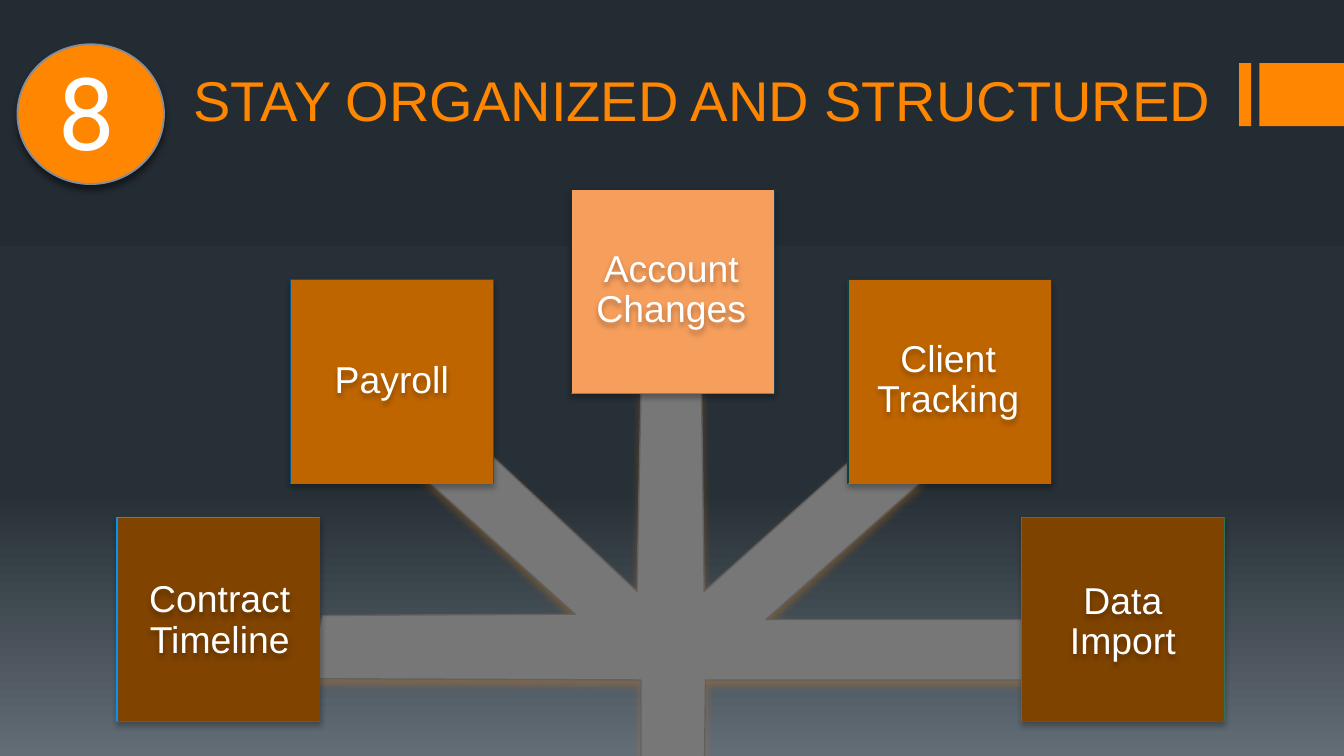
from dataclasses import dataclass

from pptx import Presentation
from pptx.dml.color import RGBColor
from pptx.enum.shapes import MSO_SHAPE
from pptx.enum.text import MSO_ANCHOR, MSO_AUTO_SIZE, PP_ALIGN
from pptx.oxml import parse_xml
from pptx.oxml.ns import nsdecls, qn
from pptx.util import Inches, Pt

RECT, OVAL = MSO_SHAPE.RECTANGLE, MSO_SHAPE.OVAL
TOP, MIDDLE = MSO_ANCHOR.TOP, MSO_ANCHOR.MIDDLE
LEFT, CENTER = PP_ALIGN.LEFT, PP_ALIGN.CENTER
FIT, FIXED = MSO_AUTO_SIZE.SHAPE_TO_FIT_TEXT, MSO_AUTO_SIZE.NONE


@dataclass(frozen=True)
class Theme:
    font: str = "Arial"
    digit_font: str = "Roboto"
    accent: str = "FF8600"
    white: str = "FFFFFF"
    hub: str = "777777"
    hub_edge: str = "606060"
    ring: str = "838D9B"
    title_size: int = 30
    label_size: int = 20
    digit_size: int = 54
    # position in percent, colour
    back: tuple = ((0, "242C33"), (65, "273037"), (100, "636D76"))
    # colour, opacity in percent, blur and distance in points
    tile_shade: tuple = ("000000", 27, 3, 2.1)
    hub_shade: tuple = ("FF8600", 27, 4, 2)
    ring_shade: tuple = ("000000", 48, 3.8, 3)


THEME = Theme()
SLIDE_W = 10
SLIDE_H = SLIDE_W * 9 / 16
TILE_W, TILE_H = 1.51, 1.52
LABEL_W = 1.49

# left, top, fill, edge
TILES = [
    (4.25, 1.41, "F69E5C", "013253"),
    (6.31, 2.08, "BF6500", "034543"),
    (7.6, 3.85, "7F4300", "048C89"),
    (0.87, 3.85, "804300", "0195F9"),
    (2.16, 2.08, "BF6500", "01568F"),
]

# text, left, top, height
LABELS = [
    ("Contract Timeline", 0.89, 4.27, 0.7),
    ("Payroll", 2.17, 2.64, 0.39),
    ("Client Tracking", 6.31, 2.48, 0.7),
    ("Data Import", 7.61, 4.28, 0.7),
    ("Account Changes", 4.25, 1.81, 0.7),
]

HUB = [
    (5, 6.72), (4.52, 5.91), (4.77, 5.91), (4.77, 5.06), (2.27, 5.05),
    (2.4, 4.58), (4.28, 4.57), (3.15, 3.55), (3.55, 3.29), (4.74, 4.4),
    (4.77, 2.91), (5.22, 2.91), (5.24, 4.4), (6.46, 3.31), (6.86, 3.58),
    (5.7, 4.61), (7.6, 4.61), (7.73, 5.06), (5.25, 5.06), (5.24, 5.91),
    (5.48, 5.91),
]


def box(*sides):
    return [Inches(side) for side in sides]


def shade(shape, look):
    """Give the shape a soft shadow that falls straight down."""
    color, alpha, blur, dist = look
    effects = shape._element.spPr.find(qn("a:effectLst"))
    effects.append(parse_xml(
        f'<a:outerShdw {nsdecls("a")} blurRad="{Pt(blur)}" dist="{Pt(dist)}" '
        f'dir="5400000" rotWithShape="0"><a:srgbClr val="{color}">'
        f'<a:alpha val="{alpha * 1000}"/></a:srgbClr></a:outerShdw>'))


def paint(shape, fill, edge=None, width=0.75, look=None):
    shape.fill.solid()
    shape.fill.fore_color.rgb = RGBColor.from_string(fill)
    if edge:
        shape.line.color.rgb = RGBColor.from_string(edge)
        shape.line.width = Pt(width)
    else:
        shape.line.fill.background()
    shape.shadow.inherit = False
    if look:
        shade(shape, look)


def add_form(shapes, kind, place, *style):
    paint(shapes.add_shape(kind, *box(*place)), *style)


def add_outline(shapes, points, *style):
    spots = [box(*point) for point in points]
    pen = shapes.build_freeform(*spots[0])
    pen.add_line_segments(spots[1:], close=True)
    paint(pen.convert_to_shape(), *style)


def write(frame, text, font, size, color, align=LEFT, lead=None):
    para = frame.paragraphs[0]
    para.alignment = align
    if lead:
        para.line_spacing = lead
    run = para.add_run()
    run.text = text
    run.font.name = font
    run.font.size = Pt(size)
    run.font.color.rgb = RGBColor.from_string(color)


def set_frame(frame, insets, anchor, fit):
    frame.word_wrap = True
    frame.auto_size = fit
    frame.vertical_anchor = anchor
    (frame.margin_left, frame.margin_top,
     frame.margin_right, frame.margin_bottom) = box(*insets)


def set_back(slide):
    stops = "".join(
        f'<a:gs pos="{spot * 1000}"><a:srgbClr val="{color}"/></a:gs>'
        for spot, color in THEME.back)
    slide._element.cSld.insert(0, parse_xml(
        f'<p:bg {nsdecls("p", "a")}><p:bgPr><a:gradFill rotWithShape="1">'
        f'<a:gsLst>{stops}</a:gsLst><a:lin ang="5400000" scaled="0"/>'
        '</a:gradFill><a:effectLst/></p:bgPr></p:bg>'))


def set_title(slide, text):
    title = slide.shapes.title
    title.left, title.top, title.width, title.height = box(0.47, 0.37, 9.53, 0.63)
    set_frame(title.text_frame, (0.97, 0.12, 0.1, 0.1), TOP, FIXED)
    write(title.text_frame, text, THEME.font, THEME.title_size, THEME.accent)


def add_tile(slide, left, top, fill, edge):
    """Draw a square whose lower right half covers its own edge line."""
    shapes = slide.shapes.add_group_shape().shapes
    right, foot = left + TILE_W, top + TILE_H
    add_form(shapes, RECT, (left, top, TILE_W, TILE_H),
             fill, edge, 0.75, THEME.tile_shade)
    add_outline(shapes, [(right, foot), (left, foot), (right, top)], fill)


def add_label(slide, text, left, top, height):
    label = slide.shapes.add_textbox(*box(left, top, LABEL_W, height))
    set_frame(label.text_frame, (0.09, 0.04, 0.09, 0.04), MIDDLE, FIT)
    write(label.text_frame, text, THEME.font, THEME.label_size, THEME.white,
          CENTER, 0.9)
    label.shadow.inherit = False
    shade(label, THEME.tile_shade)


def add_badge(slide, digit):
    add_form(slide.shapes, OVAL, (0.13, 0.33, 1.09, 1.04),
             THEME.accent, THEME.ring, 1, THEME.ring_shade)
    text = slide.shapes.add_textbox(*box(0.34, 0.32, 0.88, 1.01))
    set_frame(text.text_frame, (0.1, 0.05, 0.1, 0.05), TOP, FIT)
    write(text.text_frame, digit, THEME.digit_font, THEME.digit_size, THEME.white)


def main():
    deck = Presentation()
    deck.slide_width, deck.slide_height = box(SLIDE_W, SLIDE_H)
    slide = deck.slides.add_slide(deck.slide_layouts[5])
    set_back(slide)
    set_title(slide, "STAY ORGANIZED AND STRUCTURED")
    for left, width in ((9.22, 0.09), (9.37, 0.63)):
        add_form(slide.shapes, RECT, (left, 0.47, width, 0.47), THEME.accent)
    add_outline(slide.shapes, HUB, THEME.hub, THEME.hub_edge, 0.75,
                THEME.hub_shade)
    for tile in TILES:
        add_tile(slide, *tile)
    for label in LABELS:
        add_label(slide, *label)
    add_badge(slide, "8")
    deck.save("out.pptx")


if __name__ == "__main__":
    main()
